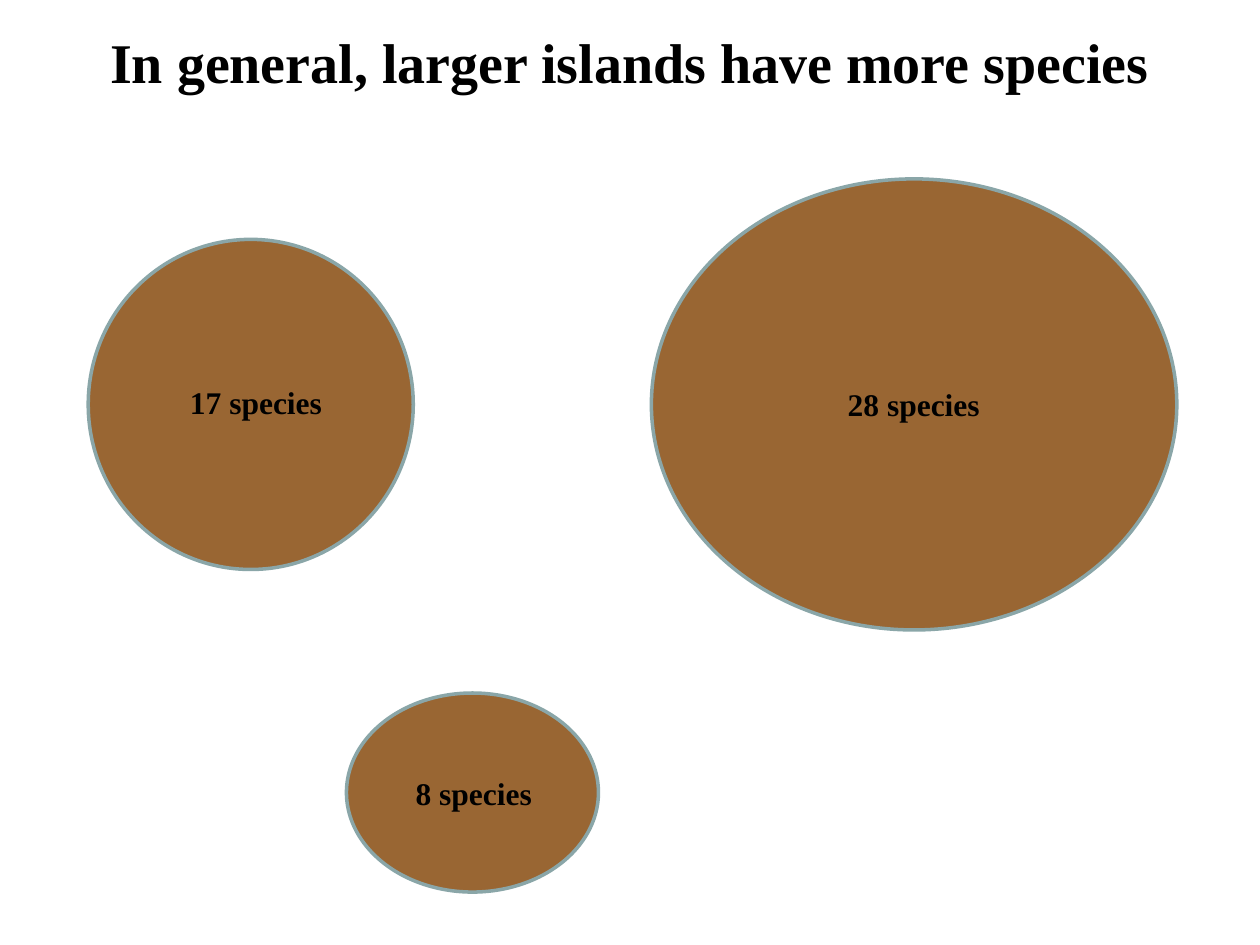
"""Build a slide on island size and species count."""
from dataclasses import dataclass

from pptx import Presentation
from pptx.dml.color import RGBColor
from pptx.enum.shapes import MSO_SHAPE
from pptx.enum.text import MSO_AUTO_SIZE, PP_ALIGN
from pptx.util import Inches, Pt


@dataclass(frozen=True)
class Theme:
    font: str = "Times New Roman"
    ink: RGBColor = RGBColor(0, 0, 0)
    land: RGBColor = RGBColor(0x99, 0x66, 0x33)
    shore: RGBColor = RGBColor(0x8A, 0xA6, 0xA8)
    edge: Pt = Pt(2)
    title: Pt = Pt(32)
    label: Pt = Pt(18)


THEME = Theme()
ISLANDS = [
    (5.17, 1.42, 4.17, 3.58),
    (2.75, 5.5, 2, 1.58),
    (0.7, 1.9, 2.58, 2.62),
]
LABELS = [
    ("28 species", (6.63, 3.01, 1.26, 0.4)),
    ("8 species", (3.2, 6.09, 1.13, 0.4)),
    ("17 species", (1.41, 2.99, 1.26, 0.4)),
]


def add_land(slide, area):
    land = slide.shapes.add_shape(MSO_SHAPE.OVAL, *map(Inches, area))
    land.shadow.inherit = False
    land.fill.solid()
    land.fill.fore_color.rgb = THEME.land
    land.line.color.rgb = THEME.shore
    land.line.width = THEME.edge


def add_text(slide, text, area, size, align=PP_ALIGN.LEFT, wrap=False):
    frame = slide.shapes.add_textbox(*map(Inches, area)).text_frame
    frame.word_wrap = wrap
    frame.auto_size = MSO_AUTO_SIZE.SHAPE_TO_FIT_TEXT
    para = frame.paragraphs[0]
    para.alignment = align
    run = para.add_run()
    run.text = text
    run.font.name = THEME.font
    run.font.size = size
    run.font.bold = True
    run.font.color.rgb = THEME.ink


def main():
    deck = Presentation()
    deck.slide_width, deck.slide_height = Inches(10), Inches(7.5)
    slide = deck.slides.add_slide(deck.slide_layouts[6])
    add_text(slide, "In general, larger islands have more species",
             (0, 0.17, 10, 0.63), THEME.title, PP_ALIGN.CENTER, True)
    for area in ISLANDS:
        add_land(slide, area)
    for text, area in LABELS:
        add_text(slide, text, area, THEME.label)
    deck.save("out.pptx")


if __name__ == "__main__":
    main()
